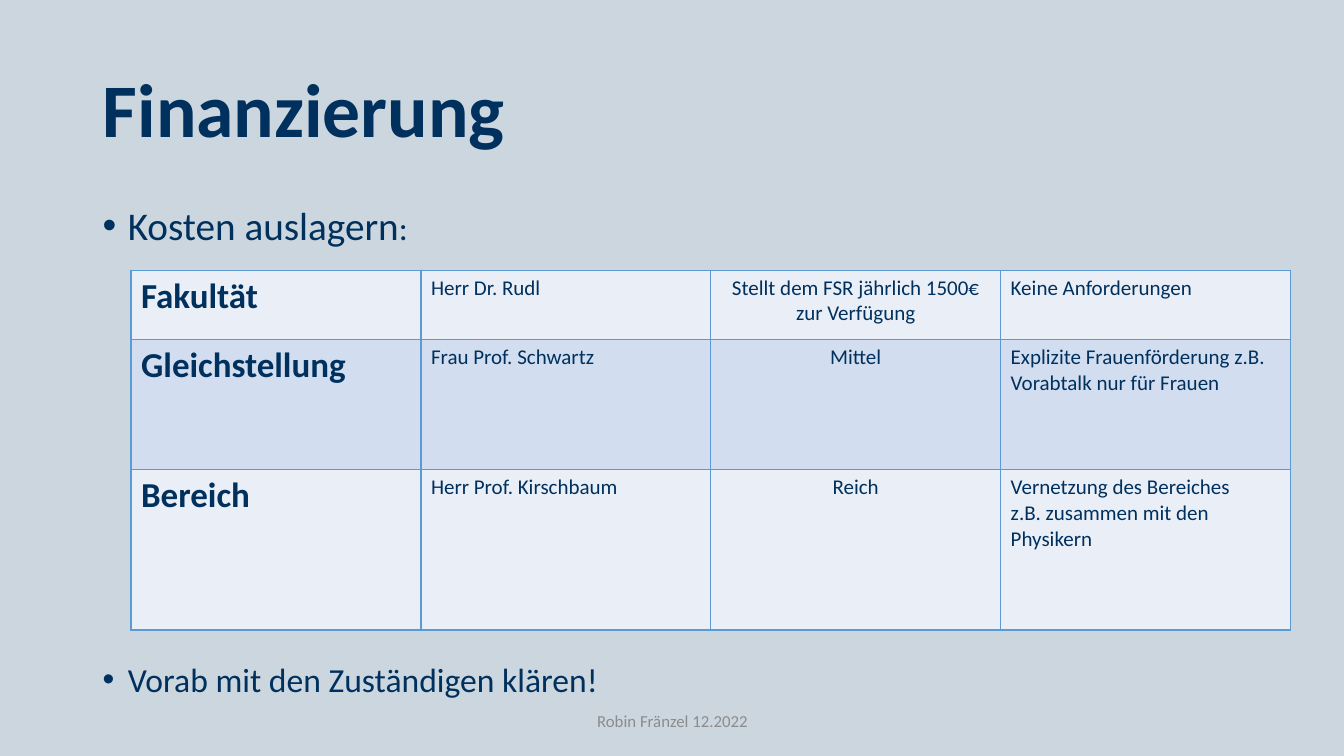
from lxml import etree
from pptx import Presentation
from pptx.dml.color import RGBColor
from pptx.enum import text
from pptx.oxml.ns import qn
from pptx.util import Inches, Pt

TITLE = "Finanzierung"
POINTS = [
    # runs as (words, size), then points of space before
    ([("Kosten auslagern", 28), (":", 24)], 10),
    ([("Vorab mit den Zuständigen klären!", 24)], 296),
]
ROWS = [
    ("Fakultät", "Herr Dr. Rudl",
     "Stellt dem FSR jährlich 1500€ zur Verfügung", "Keine Anforderungen"),
    ("Gleichstellung", "Frau Prof. Schwartz", "Mittel",
     "Explizite Frauenförderung z.B. Vorabtalk nur für Frauen"),
    ("Bereich", "Herr Prof. Kirschbaum", "Reich",
     "Vernetzung des Bereiches\nz.B. zusammen mit den Physikern"),
]
HEIGHTS = [0.69, 1.29, 1.59]
FOOTER = "Robin Fränzel 12.2022"

THEME = {
    "font": "Calibri", "back": "CCD6DF", "ink": "00305D", "grey": "8C8C8C",
    "bands": ["EAEFF7", "D2DEEF"], "line": "5B9BD5",
    "title": 54, "head": 25, "cell": 15, "foot": 12,
}
LEFT, WIDE = 0.92, 11.5
ALIGN = text.PP_ALIGN
MIDDLE = text.MSO_ANCHOR.MIDDLE


def rgb(code):
    return RGBColor.from_string(code)


def place(shape, *box):
    for name, value in zip(("left", "top", "width", "height"), box):
        setattr(shape, name, Inches(value))


def style(part, size, color=THEME["ink"], bold=False):
    look = {"name": THEME["font"], "size": Pt(size), "bold": bold}
    for name, value in look.items():
        setattr(part.font, name, value)
    part.font.color.rgb = rgb(color)


def add_box(slide, *box):
    shape = slide.shapes.add_textbox(*map(Inches, box))
    shape.text_frame.word_wrap = True
    return shape.text_frame


def add_bullet(para):
    props = para._p.get_or_add_pPr()
    props.set("marL", str(Inches(0.25)))
    props.set("indent", str(Inches(-0.25)))
    etree.SubElement(props, qn("a:buFont"), typeface="Arial")
    etree.SubElement(props, qn("a:buChar"), char="•")


def add_border(cell):
    props = cell._tc.get_or_add_tcPr()
    for side in "LRTB":
        line = etree.SubElement(props, qn(f"a:ln{side}"), w=str(Pt(1)))
        fill = etree.SubElement(line, qn("a:solidFill"))
        etree.SubElement(fill, qn("a:srgbClr"), val=THEME["line"])


def add_title(slide):
    title = slide.shapes.title
    place(title, LEFT, 0.4, WIDE, 1.45)
    frame = title.text_frame
    frame.text, frame.vertical_anchor = TITLE, MIDDLE
    para = frame.paragraphs[0]
    para.alignment, para.line_spacing = ALIGN.LEFT, 0.9
    style(para.runs[0], THEME["title"], bold=True)


def add_points(slide):
    frame = add_box(slide, LEFT, 2, WIDE, 5.35)
    for i, (runs, gap) in enumerate(POINTS):
        para = frame.add_paragraph() if i else frame.paragraphs[0]
        para.line_spacing, para.space_before = 0.9, Pt(gap)
        add_bullet(para)
        for words, size in runs:
            run = para.add_run()
            run.text = words
            style(run, size)


def add_footer(slide):
    frame = add_box(slide, 4.42, 6.95, 4.5, 0.4)
    frame.text, frame.vertical_anchor = FOOTER, MIDDLE
    para = frame.paragraphs[0]
    para.alignment = ALIGN.CENTER
    style(para.runs[0], THEME["foot"], THEME["grey"])


def add_costs(slide):
    count = len(ROWS[0])
    box = map(Inches, (1.3, 2.68, WIDE, sum(HEIGHTS)))
    table = slide.shapes.add_table(len(ROWS), count, *box).table
    table.first_row = False
    for col in table.columns:
        col.width = Inches(WIDE / count)
    for r, (row, high) in enumerate(zip(ROWS, HEIGHTS)):
        table.rows[r].height = Inches(high)
        for c, words in enumerate(row):
            cell = table.cell(r, c)
            cell.text = words
            add_border(cell)
            cell.fill.solid()
            cell.fill.fore_color.rgb = rgb(THEME["bands"][r % 2])
            for para in cell.text_frame.paragraphs:
                para.alignment = ALIGN.CENTER if c == 2 else ALIGN.LEFT
                size = THEME["cell"] if c else THEME["head"]
                style(para.runs[0], size, bold=c == 0)


def main():
    deck = Presentation()
    deck.slide_width, deck.slide_height = Inches(13.33), Inches(7.5)
    slide = deck.slides.add_slide(deck.slide_layouts[5])
    slide.background.fill.solid()
    slide.background.fill.fore_color.rgb = rgb(THEME["back"])
    for add in (add_title, add_points, add_footer, add_costs):
        add(slide)
    deck.save("out.pptx")


if __name__ == "__main__":
    main()
